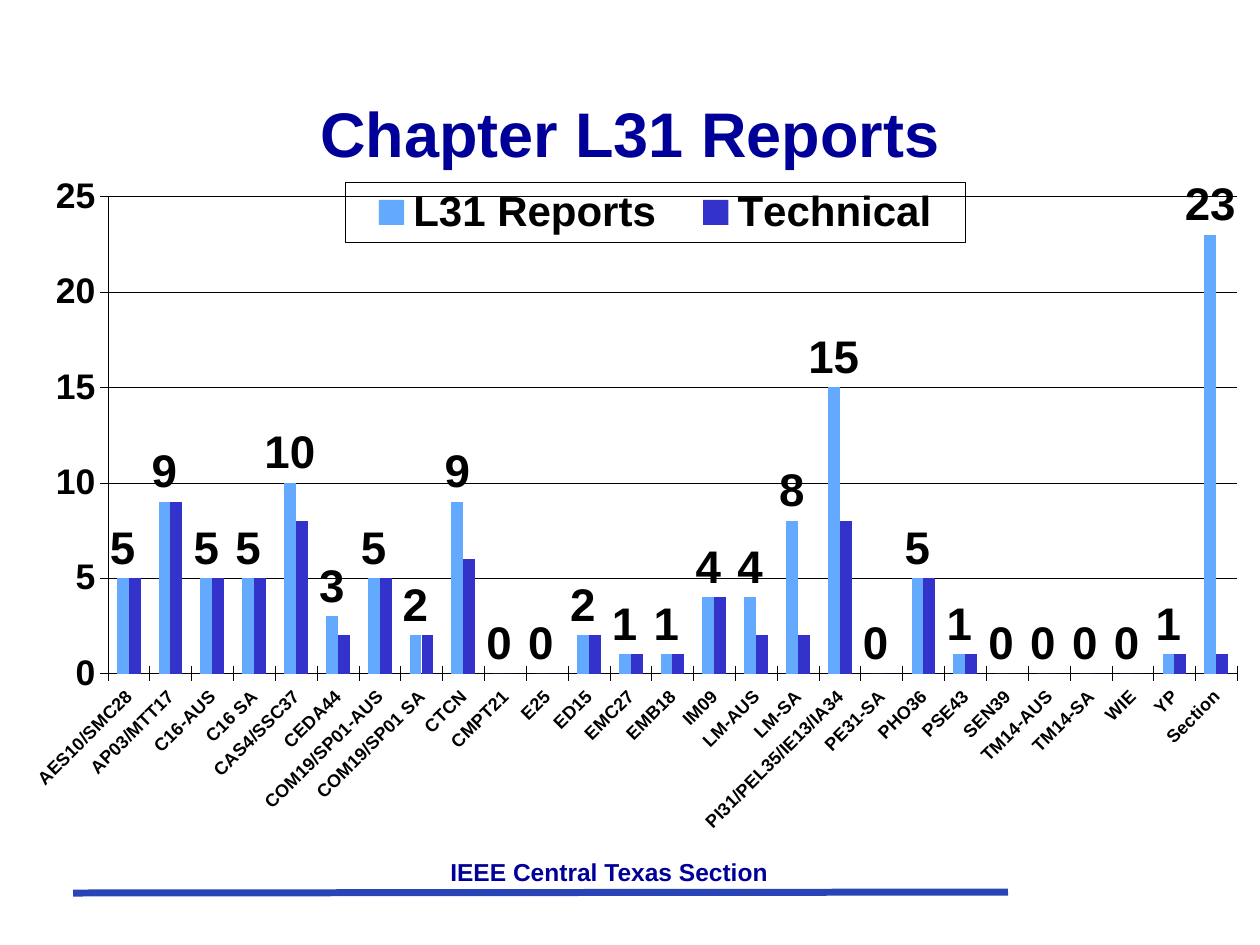
from dataclasses import dataclass

from lxml import etree
from pptx import Presentation
from pptx.chart.data import CategoryChartData
from pptx.dml.color import RGBColor
from pptx.enum.chart import (XL_CHART_TYPE, XL_LABEL_POSITION, XL_LEGEND_POSITION,
                             XL_TICK_LABEL_POSITION, XL_TICK_MARK)
from pptx.enum.shapes import MSO_CONNECTOR
from pptx.enum.text import MSO_ANCHOR, PP_ALIGN
from pptx.oxml import parse_xml
from pptx.oxml.ns import qn
from pptx.util import Inches, Pt

COLUMN = XL_CHART_TYPE.COLUMN_CLUSTERED
ABOVE = XL_LABEL_POSITION.OUTSIDE_END
TOP = XL_LEGEND_POSITION.TOP
LOW = XL_TICK_LABEL_POSITION.LOW
CROSS = XL_TICK_MARK.CROSS
STRAIGHT = MSO_CONNECTOR.STRAIGHT
MIDDLE = MSO_ANCHOR.MIDDLE
START = MSO_ANCHOR.TOP
CENTER = PP_ALIGN.CENTER
CHART_NS = "http://schemas.openxmlformats.org/drawingml/2006/chart"
DRAW_NS = "http://schemas.openxmlformats.org/drawingml/2006/main"

CHAPTERS = [
    ("AES10/SMC28", 5, 5), ("AP03/MTT17", 9, 9), ("C16-AUS", 5, 5), ("C16 SA", 5, 5),
    ("CAS4/SSC37", 10, 8), ("CEDA44", 3, 2), ("COM19/SP01-AUS", 5, 5),
    ("COM19/SP01 SA", 2, 2), ("CTCN", 9, 6), ("CMPT21", 0, 0), ("E25", 0, 0),
    ("ED15", 2, 2), ("EMC27", 1, 1), ("EMB18", 1, 1), ("IM09", 4, 4), ("LM-AUS", 4, 2),
    ("LM-SA", 8, 2), ("PI31/PEL35/IE13/IA34", 15, 8), ("PE31-SA", 0, 0),
    ("PHO36", 5, 5), ("PSE43", 1, 1), ("SEN39", 0, 0), ("TM14-AUS", 0, 0),
    ("TM14-SA", 0, 0), ("WIE", 0, 0), ("YP", 1, 1), ("Section", 23, 1),
]


@dataclass(frozen=True)
class Theme:
    """Colours, font and type sizes of the deck."""
    face: str = "Arial"
    ink: str = "000000"
    navy: str = "000099"
    rule: str = "2944B7"
    bars: tuple = ("63AAFE", "3333CC")
    title: float = 36
    foot: float = 14
    label: float = 26.1
    key: float = 24
    value: float = 20.3
    name: float = 10.3
    thin: float = 0.25
    thick: float = 4


class Deck:
    """Draws styled elements, placed by shares of the slide's size."""

    def __init__(self, theme, wide, high):
        """Start a deck with one blank slide."""
        self.theme = theme
        self.show = Presentation()
        self.show.slide_width, self.show.slide_height = Inches(wide), Inches(high)
        self.slide = self.show.slides.add_slide(self.show.slide_layouts[6])

    def place(self, *shares):
        """Turn shares of width and height into lengths."""
        sides = (self.show.slide_width, self.show.slide_height) * 2
        return [round(share * side) for share, side in zip(shares, sides)]

    def style(self, font, size, color):
        """Set a bold font in the theme's face."""
        font.name, font.size, font.bold = self.theme.face, Pt(size), True
        font.color.rgb = RGBColor.from_string(color)

    def stroke(self, line, color, width):
        """Set a line's colour and width."""
        line.color.rgb = RGBColor.from_string(color)
        line.width = Pt(width)

    def text(self, words, box, size, anchor):
        """Add one centred line of text."""
        frame = self.slide.shapes.add_textbox(*self.place(*box)).text_frame
        frame.word_wrap = True
        frame.vertical_anchor = anchor
        frame.text = words
        para = frame.paragraphs[0]
        para.alignment = CENTER
        self.style(para.runs[0].font, size, self.theme.navy)

    def line(self, ends):
        """Add a thick rule without a shadow."""
        rule = self.slide.shapes.add_connector(STRAIGHT, *self.place(*ends))
        self.stroke(rule.line, self.theme.rule, self.theme.thick)
        etree.SubElement(rule._element.spPr, qn("a:effectLst"))

    def layout(self, host, index, box, inner=False):
        """Pin a chart part to shares of the chart's size."""
        for old in host.findall(qn("c:layout")):
            host.remove(old)
        node = etree.Element(qn("c:layout"))
        manual = etree.SubElement(node, qn("c:manualLayout"))
        pairs = [("layoutTarget", "inner")] if inner else []
        pairs += [("xMode", "edge"), ("yMode", "edge"), *zip("xywh", box)]
        for tag, value in pairs:
            etree.SubElement(manual, qn("c:" + tag)).set("val", str(value))
        host.insert(index, node)

    def axis(self, axis, size):
        """Style an axis line, its ticks and its labels."""
        axis.major_tick_mark = CROSS
        self.stroke(axis.format.line, self.theme.ink, self.theme.thin)
        self.style(axis.tick_labels.font, size, self.theme.ink)

    def legend(self, chart, box):
        """Add a framed legend over the plot."""
        chart.has_legend = True
        legend = chart.legend
        legend.position = TOP
        legend.include_in_layout = True
        self.style(legend.font, self.theme.key, self.theme.ink)
        node = legend._element
        self.layout(node, 1, box)
        frame = parse_xml(
            f'<c:spPr xmlns:c="{CHART_NS}" xmlns:a="{DRAW_NS}"><a:noFill/>'
            f'<a:ln w="{Pt(self.theme.thin)}"><a:solidFill>'
            f'<a:srgbClr val="{self.theme.ink}"/></a:solidFill></a:ln></c:spPr>')
        node.find(qn("c:txPr")).addprevious(frame)

    def chart(self, rows, names, box, plot, key):
        """Add a clustered column chart with labels on its first series."""
        theme = self.theme
        cats, *columns = zip(*rows)
        data = CategoryChartData()
        data.categories = cats
        for name, column in zip(names, columns):
            data.add_series(name, column)
        chart = self.slide.shapes.add_chart(COLUMN, *self.place(*box), data).chart
        chart.has_title = False
        self.style(chart.font, theme.label, theme.ink)
        self.layout(chart._chartSpace.chart.plotArea, 0, plot, inner=True)
        self.legend(chart, key)

        across, up = chart.category_axis, chart.value_axis
        self.axis(across, theme.name)
        across.tick_label_position = LOW
        across._element.txPr.bodyPr.set("rot", str(-45 * 60000))
        self.axis(up, theme.value)
        up.minimum_scale, up.maximum_scale, up.major_unit = 0, 25, 5
        self.stroke(up.major_gridlines.format.line, theme.ink, theme.thin)

        group = chart.plots[0]
        group.vary_by_categories = False
        group.gap_width, group.overlap = 150, 0
        for series, color in zip(group.series, theme.bars):
            series.format.fill.solid()
            series.format.fill.fore_color.rgb = RGBColor.from_string(color)
            series.invert_if_negative = False
        labels = group.series[0].data_labels
        labels.show_value = True
        labels.position = ABOVE
        self.style(labels.font, theme.label, theme.ink)


def main():
    """Build and save the slide."""
    theme = Theme()
    deck = Deck(theme, 10, 7.5)
    deck.line((0.058, 0.945, 0.8, 0.944))
    deck.text("IEEE Central Texas Section", (0.175, 0.9, 0.617, 0.044), theme.foot, START)
    deck.text("Chapter L31 Reports", (0.075, 0.056, 0.85, 0.167), theme.title, MIDDLE)
    deck.chart(CHAPTERS, ("L31 Reports", "Technical"), (0, 0.18, 0.983, 0.759),
               plot=(0.087, 0.037, 0.912, 0.665), key=(0.279, 0.017, 0.5, 0.084))
    deck.show.save("out.pptx")


if __name__ == "__main__":
    main()
